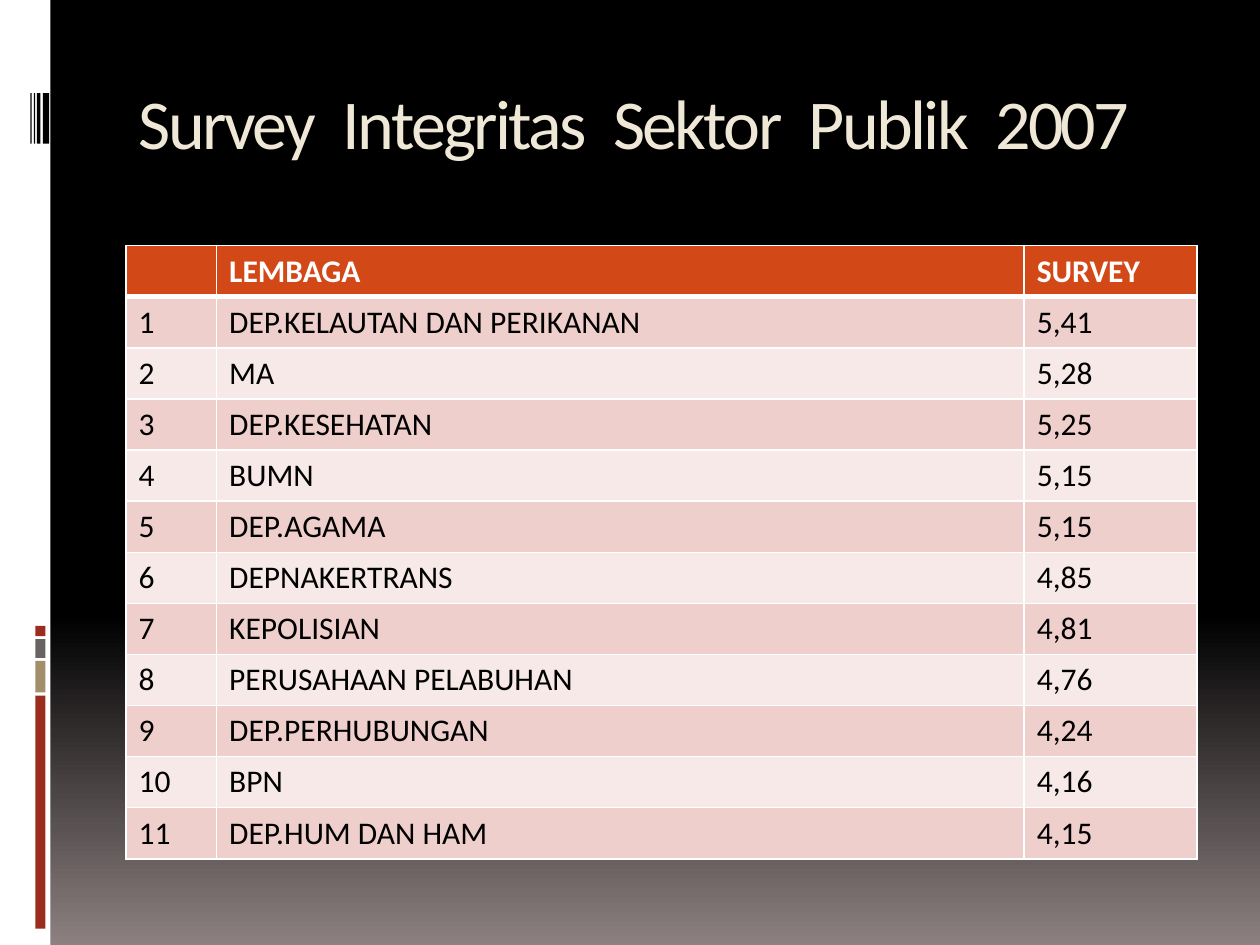
from lxml import etree
from pptx import Presentation
from pptx.dml.color import RGBColor
from pptx.enum import shapes, text
from pptx.oxml import ns
from pptx.util import Pt

TITLE = "Survey Integritas Sektor Publik 2007"
HEADER = ("", "LEMBAGA", "SURVEY")
SCORES = [
    ("DEP.KELAUTAN DAN PERIKANAN", "5,41"),
    ("MA", "5,28"),
    ("DEP.KESEHATAN", "5,25"),
    ("BUMN", "5,15"),
    ("DEP.AGAMA", "5,15"),
    ("DEPNAKERTRANS", "4,85"),
    ("KEPOLISIAN", "4,81"),
    ("PERUSAHAAN PELABUHAN", "4,76"),
    ("DEP.PERHUBUNGAN", "4,24"),
    ("BPN", "4,16"),
    ("DEP.HUM DAN HAM", "4,15"),
]
COLUMN_WIDTHS = (51.8, 461.5, 98.7)
ROW_HEIGHT = 29.22
HEADER_FILL, BANDS = "D34817", ("EFCFCC", "F7E9E8")

SIDEBAR = (0, 0, 28.8, 540, "FFFFFF")
# top, height, colour
BLOCKS = [
    (397.5, 133.2, "9B2D1F"),
    (377.7, 18, "A28E6A"),
    (365.2, 10.8, "696464"),
    (357.7, 5.8, "9B2D1F"),
]
# left, width
BARS = [(24.5, 3.6), (21.1, 2.1), (19.4, 0.7), (17.4, 0.7)]


def colour(value):
    return RGBColor.from_string(value)


def add_text(paragraph, words, size=18, color="000000", bold=False, spacing=0):
    """Append a run; spacing is the letter spacing in points."""
    run = paragraph.add_run()
    run.text = words
    run.font.name = "Calibri"
    run.font.size = Pt(size)
    run.font.bold = bold
    run.font.color.rgb = colour(color)
    if spacing:
        run._r.get_or_add_rPr().set("spc", str(round(spacing * 100)))


def add_block(slide, left, top, width, height, fill):
    block = slide.shapes.add_shape(
        shapes.MSO_SHAPE.RECTANGLE, Pt(left), Pt(top), Pt(width), Pt(height))
    block.shadow.inherit = False
    block.fill.solid()
    block.fill.fore_color.rgb = colour(fill)
    block.line.fill.background()


def set_borders(cell, **widths):
    """Draw white borders; widths maps L, R, T and B to points."""
    properties = cell._tc.get_or_add_tcPr()
    for side, width in widths.items():
        line = etree.SubElement(properties, ns.qn(f"a:ln{side}"), w=str(Pt(width)))
        fill = etree.SubElement(line, ns.qn("a:solidFill"))
        etree.SubElement(fill, ns.qn("a:srgbClr"), val="FFFFFF")


def paint_background(slide):
    fill = slide.background.fill
    fill.gradient()
    fill.gradient_angle = 270
    for stop, (position, value) in zip(
            fill.gradient_stops, [(0.65, "000000"), (1, "8C8080")]):
        stop.position = position
        stop.color.rgb = colour(value)


def fill_title(title):
    title.left, title.top, title.width, title.height = Pt(72), Pt(40.3), Pt(612), Pt(72)
    frame = title.text_frame
    frame.vertical_anchor = text.MSO_ANCHOR.TOP
    frame.margin_top = Pt(5)
    paragraph = frame.paragraphs[0]
    paragraph.alignment = text.PP_ALIGN.LEFT
    for index, word in enumerate(TITLE.split()):
        if index:
            add_text(paragraph, " ", size=40, color="EFE8D6", spacing=6)
        add_text(paragraph, word, size=40, color="EFE8D6", spacing=-1.5)


def add_scores(slide):
    rows = [HEADER] + [(str(n), *score) for n, score in enumerate(SCORES, 1)]
    table = slide.shapes.add_table(
        len(rows), len(HEADER), Pt(72), Pt(140.4),
        Pt(sum(COLUMN_WIDTHS)), Pt(ROW_HEIGHT * len(rows))).table
    for column, width in zip(table.columns, COLUMN_WIDTHS):
        column.width = Pt(width)
    for r, row in enumerate(rows):
        table.rows[r].height = Pt(ROW_HEIGHT)
        is_header = r == 0
        for c, words in enumerate(row):
            cell = table.cell(r, c)
            set_borders(cell, L=1, R=1, T=3 if r == 1 else 1, B=3 if is_header else 1)
            cell.fill.solid()
            cell.fill.fore_color.rgb = colour(
                HEADER_FILL if is_header else BANDS[(r - 1) % 2])
            if words:
                add_text(cell.text_frame.paragraphs[0], words, bold=is_header,
                         color="FFFFFF" if is_header else "000000")


def main():
    deck = Presentation()
    deck.slide_width, deck.slide_height = Pt(720), Pt(540)
    slide = deck.slides.add_slide(deck.slide_layouts[5])
    paint_background(slide)
    add_block(slide, *SIDEBAR)
    for top, height, fill in BLOCKS:
        add_block(slide, 20.2, top, 5.8, height, fill)
    for left, width in BARS:
        add_block(slide, left, 53.3, width, 28.8, "000000")
    fill_title(slide.shapes.title)
    add_scores(slide)
    deck.save("out.pptx")


if __name__ == "__main__":
    main()
